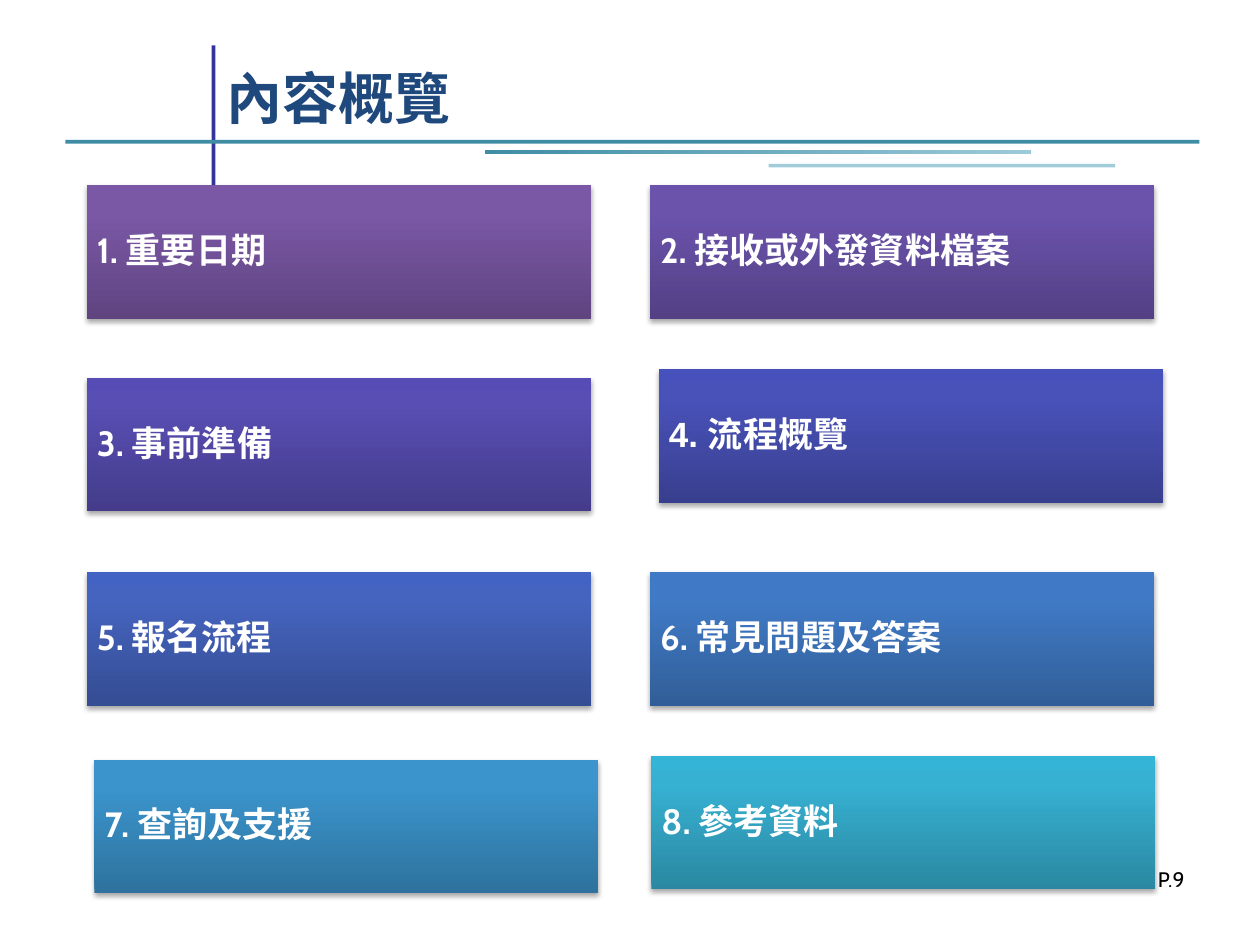
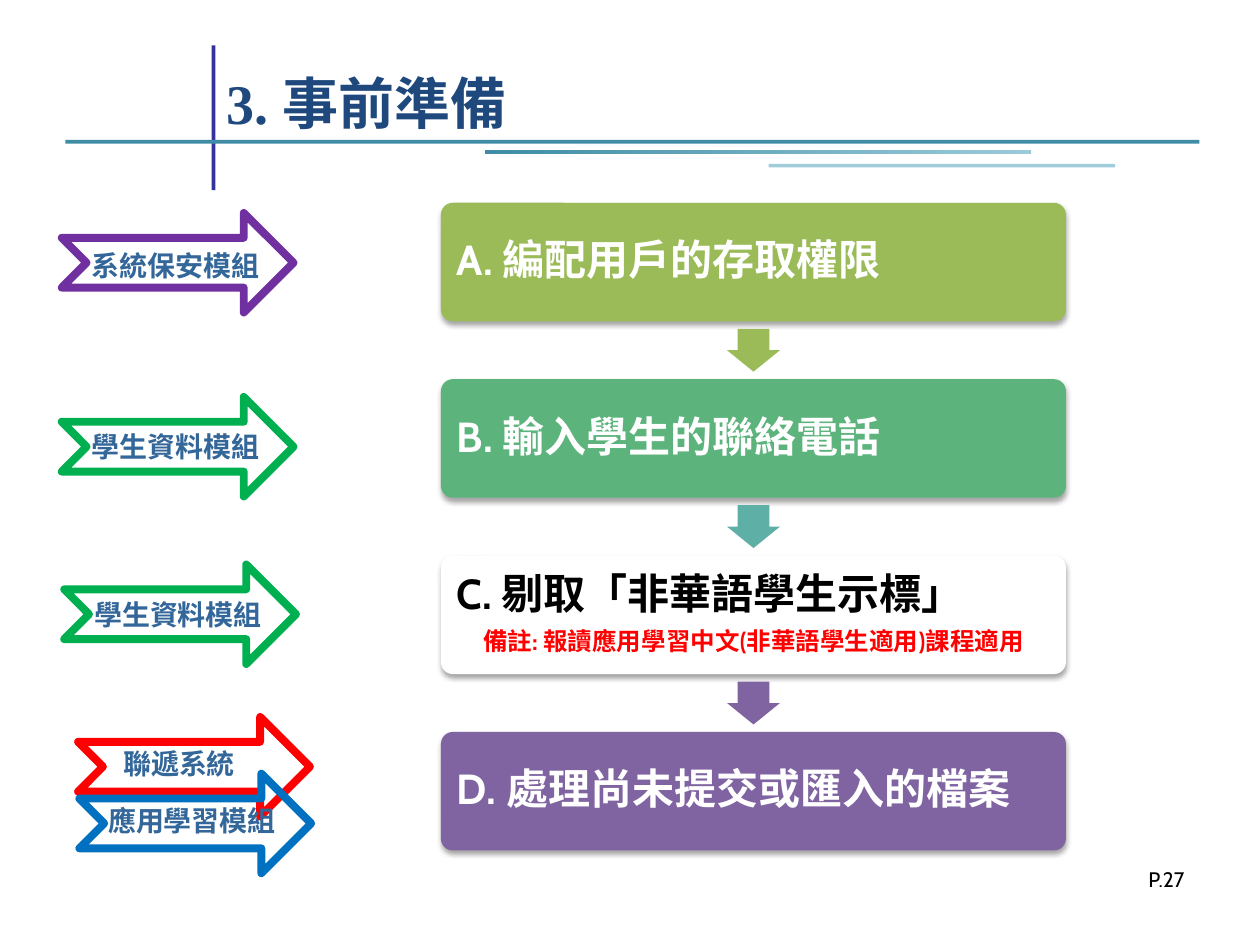
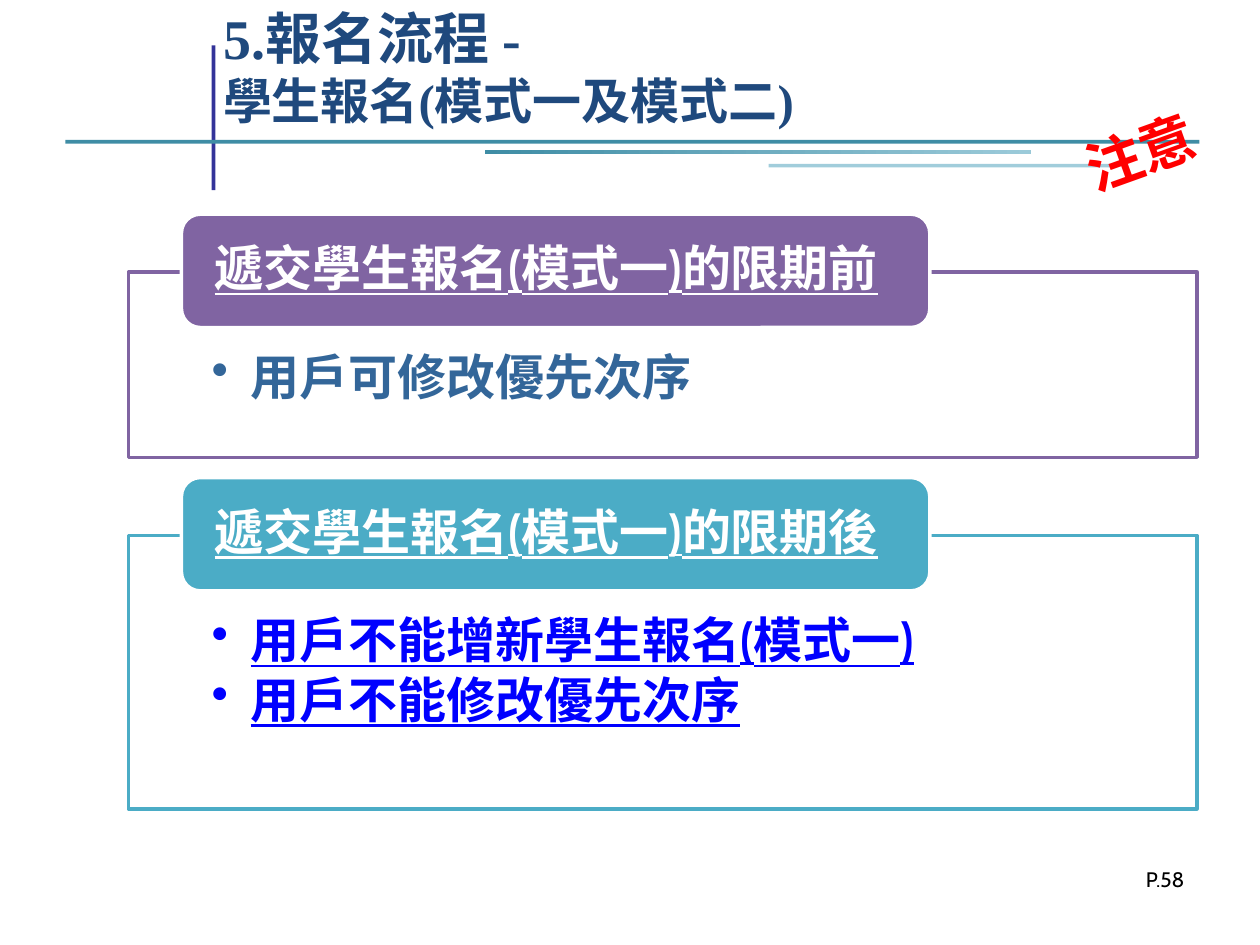
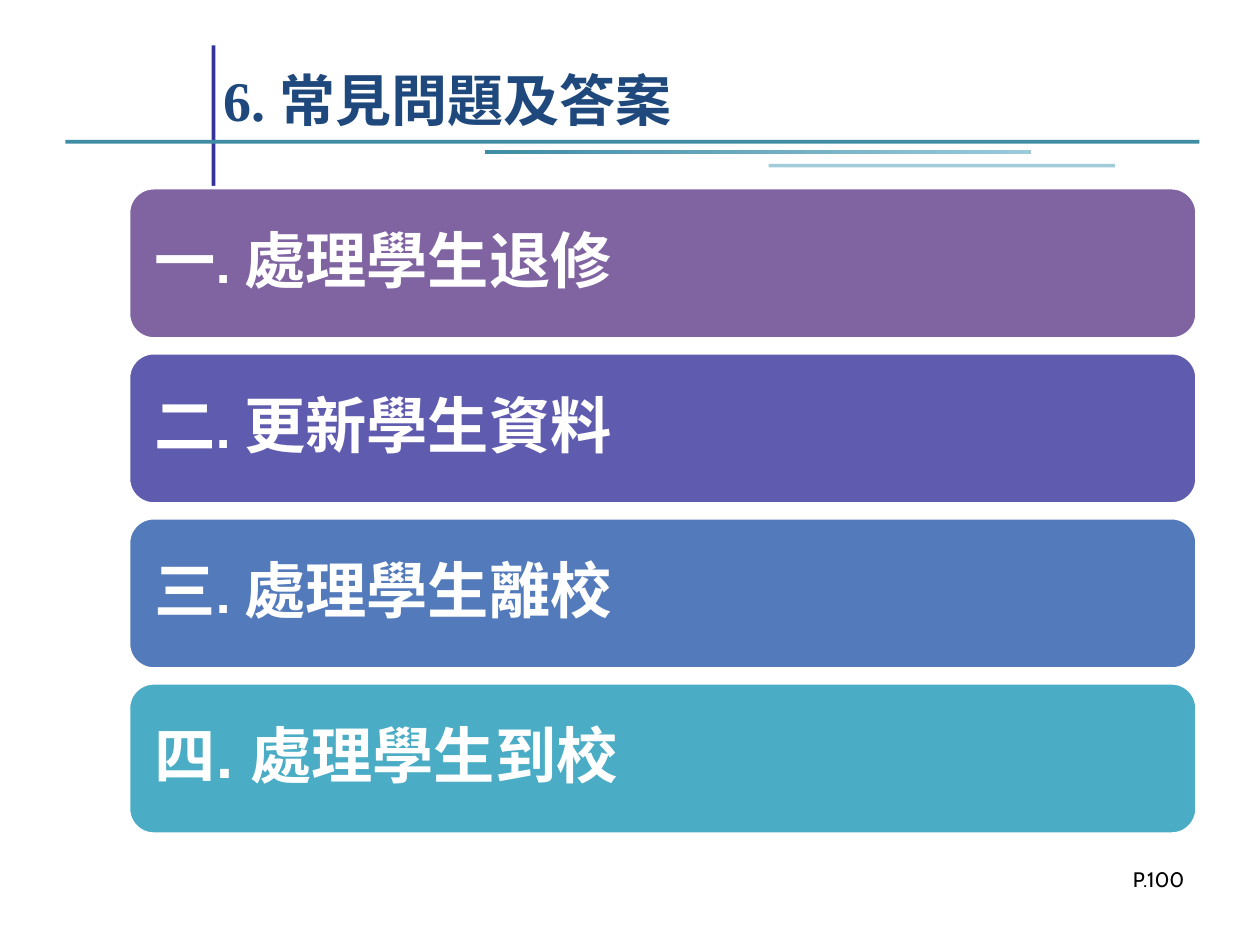
from copy import deepcopy

from lxml import etree
from pptx import Presentation
from pptx.dml.color import RGBColor
from pptx.enum.shapes import MSO_SHAPE
from pptx.enum.text import MSO_ANCHOR, MSO_AUTO_SIZE, PP_ALIGN
from pptx.oxml.ns import qn
from pptx.util import Inches, Pt

RECT = MSO_SHAPE.RECTANGLE
ROUNDED = MSO_SHAPE.ROUNDED_RECTANGLE
DOWN_ARROW = MSO_SHAPE.DOWN_ARROW
NOTCHED_ARROW = MSO_SHAPE.NOTCHED_RIGHT_ARROW
LEFT, CENTER, RIGHT = PP_ALIGN.LEFT, PP_ALIGN.CENTER, PP_ALIGN.RIGHT
TOP, MIDDLE, BOTTOM = MSO_ANCHOR.TOP, MSO_ANCHOR.MIDDLE, MSO_ANCHOR.BOTTOM
NO_AUTOFIT = MSO_AUTO_SIZE.NONE

BODY_FONT = "Cabin"
TITLE_FONT = "Times New Roman"
LATIN_FONT = "Arial"
CJK_FONT = "Noto Sans CJK SC"

WHITE = RGBColor(0xFF, 0xFF, 0xFF)
BLACK = RGBColor(0x00, 0x00, 0x00)
RED = RGBColor(0xFF, 0x00, 0x00)
BLUE = RGBColor(0x00, 0x00, 0xFF)
NAVY = RGBColor(0x1F, 0x49, 0x7D)
STEEL = RGBColor(0x33, 0x66, 0x99)
INDIGO = RGBColor(0x33, 0x33, 0x99)
TEAL = RGBColor(0x3F, 0x8D, 0xA5)
PALE_TEAL = RGBColor(0x9B, 0xCA, 0xD9)
LIGHT_TEAL = RGBColor(0xA1, 0xCD, 0xDB)
PURPLE = RGBColor(0x80, 0x64, 0xA2)
VIOLET = RGBColor(0x5F, 0x5B, 0xAE)
MID_BLUE = RGBColor(0x53, 0x7A, 0xBA)
AQUA = RGBColor(0x4B, 0xAC, 0xC6)
OLIVE = RGBColor(0x9B, 0xBB, 0x59)
GREEN = RGBColor(0x5C, 0xB3, 0x7C)
SEA = RGBColor(0x5E, 0xAF, 0xA6)
MODULE_GREEN = RGBColor(0x00, 0xB0, 0x50)
MODULE_PURPLE = RGBColor(0x70, 0x30, 0xA0)
MODULE_BLUE = RGBColor(0x00, 0x70, 0xC0)

TOPICS = [
    ("1. 重要日期", 0.69, 1.47, ("5F4480", "7B58A6", "7C57A8")),
    ("2. 接收或外發資料檔案", 5.16, 1.47, ("534085", "6B53AC", "6B52AF")),
    ("3. 事前準備", 0.69, 3, ("443C8A", "584EB3", "574CB6")),
    ("4. 流程概覽", 5.23, 2.93, ("383F8F", "4952B9", "4751BC")),
    ("5. 報名流程", 0.69, 4.54, ("354D93", "4564BF", "4263C3")),
    ("6. 常見問題及答案", 5.16, 4.54, ("315E98", "407AC6", "3E7AC9")),
    ("7. 查詢及支援", 0.75, 6.03, ("2E729D", "3B94CC", "3995CF")),
    ("8. 參考資料", 5.17, 6, ("2A88A2", "37B1D2", "34B4D6")),
]
STEPS = [
    ("A. 編配用戶的存取權限", OLIVE, WHITE),
    ("B. 輸入學生的聯絡電話", GREEN, WHITE),
    ("C. 剔取「非華語學生示標」", WHITE, BLACK),
    ("D. 處理尚未提交或匯入的檔案", PURPLE, WHITE),
]
STEP_ARROWS = [OLIVE, SEA, PURPLE]
STEP_NOTES = {2: "備註: 報讀應用學習中文(非華語學生適用)課程適用"}
MODULES = [
    ("聯遞系統", 0.62, 5.69, 0.26, 0.19, WHITE, RED),
    ("學生資料模組", 0.49, 3.15, 0.14, 0.21, WHITE, MODULE_GREEN),
    ("系統保安模組", 0.49, 1.69, 0.14, 0.23, WHITE, MODULE_PURPLE),
    ("應用學習模組", 0.63, 6.14, 0.13, 0.19, None, MODULE_BLUE),
    ("學生資料模組", 0.51, 4.48, 0.14, 0.21, WHITE, MODULE_GREEN),
]
QUESTIONS = [
    (("一. 處理學生退修",), PURPLE),
    (("二. 更新學生資料",), VIOLET),
    (("三. 處理學生離校",), MID_BLUE),
    (("四", ". 處理學生到校"), AQUA),
]


def add_box(slide, kind, box, fill=None, line=None, line_width=2):
    """Add a preset shape without shadow."""
    shape = slide.shapes.add_shape(kind, *map(Inches, box))
    shape.shadow.inherit = False
    if fill is None:
        shape.fill.background()
    else:
        shape.fill.solid()
        shape.fill.fore_color.rgb = fill
    if line is None:
        shape.line.fill.background()
    else:
        shape.line.color.rgb = line
        shape.line.width = Pt(line_width)
    return shape


def set_gradient(shape, angle, stops):
    """Fill a shape with a linear gradient of (position, colour) stops."""
    shape.fill.gradient()
    shape.fill.gradient_angle = angle
    stop_list = shape.element.spPr.find(".//" + qn("a:gsLst"))
    while len(stop_list) < len(stops):
        stop_list.append(deepcopy(stop_list[-1]))
    for stop, (position, colour) in zip(shape.fill.gradient_stops, stops):
        stop.position = position
        stop.color.rgb = colour


def add_shadow(shape):
    """Give a shape a soft shadow straight below it."""
    effects = shape.element.spPr.find(qn("a:effectLst"))
    shadow = etree.SubElement(
        effects, qn("a:outerShdw"), blurRad=str(Pt(3.1)), dist=str(Pt(1.8)),
        dir="5400000", rotWithShape="0")
    colour = etree.SubElement(shadow, qn("a:srgbClr"), val="000000")
    etree.SubElement(colour, qn("a:alpha"), val="35000")


def set_frame(shape, anchor=TOP, margins=(0.1, 0.05)):
    """Set wrapping, anchor and (side, top and bottom) margins of a text frame."""
    frame = shape.text_frame
    frame.word_wrap = True
    frame.auto_size = NO_AUTOFIT
    frame.vertical_anchor = anchor
    frame.margin_left = frame.margin_right = Inches(margins[0])
    frame.margin_top = frame.margin_bottom = Inches(margins[1])
    return frame


def style(paragraph, size, colour, bold=True, name=BODY_FONT, align=LEFT,
          spacing=None, underline=None):
    """Format a whole paragraph."""
    paragraph.alignment = align
    paragraph.line_spacing = spacing
    font = paragraph.font
    font.size, font.bold, font.name = Pt(size), bold, name
    font.underline = underline
    font.color.rgb = colour
    defaults = paragraph._p.pPr.find(qn("a:defRPr"))
    etree.SubElement(defaults, qn("a:ea"), typeface=CJK_FONT)


def add_label(slide, box, text, size, colour, **options):
    """Add a text box with one paragraph."""
    label = slide.shapes.add_textbox(*map(Inches, box))
    paragraph = set_frame(label).paragraphs[0]
    paragraph.text = text
    style(paragraph, size, colour, **options)
    return label


def add_bullet(paragraph):
    """Give a paragraph a hanging round bullet."""
    properties = paragraph._p.get_or_add_pPr()
    properties.set("marL", str(Inches(0.31)))
    properties.set("indent", str(Inches(-0.31)))
    etree.SubElement(properties, qn("a:buChar"), char="•")


def decorate_layout(slide):
    """Draw the title rules and move them to the slide's layout."""
    rules = [
        add_box(slide, RECT, (1.68, 0.36, 0.03, 1.15), INDIGO),
        add_box(slide, RECT, (0.52, 1.11, 9, 0.03), TEAL),
        add_box(slide, RECT, (3.85, 1.19, 4.33, 0.03), TEAL),
        add_box(slide, RECT, (6.1, 1.3, 2.75, 0.03), LIGHT_TEAL),
    ]
    set_gradient(rules[2], 0, [(0, TEAL), (1, PALE_TEAL)])
    for rule in rules:
        slide.slide_layout.shapes.element.append(rule.element)


def start_slide(deck, title, left, top, page, subtitle=None):
    """Add a slide with its title and page number."""
    slide = deck.slides.add_slide(deck.slide_layouts[5])
    heading = slide.shapes.title
    heading.left, heading.top = Inches(left), Inches(top)
    heading.width, heading.height = Inches(7.83), Inches(0.83)
    paragraph = set_frame(heading, BOTTOM).paragraphs[0]
    paragraph.text = title
    style(paragraph, 32, NAVY, name=TITLE_FONT)
    if subtitle:
        paragraph.add_line_break()
        run = paragraph.add_run()
        run.text = subtitle
        run.font.size = Pt(28)
    add_label(slide, (7.17, 6.83, 2.33, 0.52), f"P.{page}", 12, BLACK,
              bold=False, align=RIGHT)
    return slide


def add_topic(slide, text, left, top, colours):
    """Add one shaded tile of the overview."""
    tile = add_box(slide, RECT, (left, top, 4, 1.06), WHITE)
    stops = [RGBColor.from_string(colour) for colour in colours]
    set_gradient(tile, 90, list(zip((0, 0.8, 1), stops)))
    add_shadow(tile)
    paragraph = set_frame(tile, MIDDLE, (0.08, 0.08)).paragraphs[0]
    paragraph.text = text
    name = LATIN_FONT if text.startswith("4") else BODY_FONT
    style(paragraph, 20, WHITE, name=name, spacing=0.9)


def add_steps(slide, left, top, width):
    """Stack the preparation steps with arrows between them."""
    height, pitch = 0.94, 1.4
    for index, (text, fill, colour) in enumerate(STEPS):
        step_top = top + index * pitch
        step = add_box(slide, ROUNDED, (left, step_top, width, height), fill)
        step.adjustments[0] = 0.1
        add_shadow(step)
        frame = set_frame(step, MIDDLE, (0.1, 0.1))
        paragraph = frame.paragraphs[0]
        paragraph.text = text
        style(paragraph, 24, colour, spacing=0.9)
        if index in STEP_NOTES:
            paragraph.space_after = Pt(6)
            note = frame.add_paragraph()
            note.text = STEP_NOTES[index]
            style(note, 14, RED, align=CENTER, spacing=0.9)
    for index, fill in enumerate(STEP_ARROWS):
        arrow_top = top + index * pitch + height + 0.06
        arrow = add_box(slide, DOWN_ARROW,
                        (left + width / 2 - 0.21, arrow_top, 0.42, 0.34), fill)
        arrow.adjustments[0], arrow.adjustments[1] = 0.6, 0.5


def add_module(slide, text, left, top, indent, drop, fill, line):
    """Add a notched arrow with its module name."""
    add_box(slide, NOTCHED_ARROW, (left, top, 1.84, 0.79), fill, line, 4.5)
    add_label(slide, (left + indent, top + drop, 1.65, 0.37), text, 16, STEEL)


def add_deadline(slide, top, height, heading, rules, accent, colour, underline):
    """Add a framed list under a heading tab."""
    left = 1.02
    panel = add_box(slide, RECT, (left, top + 0.46, 8.48, height), WHITE, accent)
    frame = set_frame(panel, TOP, (0.66, 0.64))
    frame.margin_bottom = Inches(0.22)
    for index, rule in enumerate(rules):
        paragraph = frame.add_paragraph() if index else frame.paragraphs[0]
        paragraph.text = rule
        paragraph.space_after = Pt(4)
        add_bullet(paragraph)
        style(paragraph, 28, colour, spacing=0.9, underline=underline)
    tab = add_box(slide, ROUNDED, (left + 0.42, top, 5.94, 0.9), accent, WHITE)
    paragraph = set_frame(tab, MIDDLE, (0.22, 0)).paragraphs[0]
    paragraph.text = heading
    style(paragraph, 28, WHITE, spacing=0.9, underline=True)


def add_questions(slide, left, top, width):
    """Stack the question bars at equal distances."""
    for index, (parts, fill) in enumerate(QUESTIONS):
        bar = add_box(slide, ROUNDED, (left, top + index * 1.31, width, 1.2),
                      fill, WHITE)
        paragraph = set_frame(bar, MIDDLE, (0.15, 0.15)).paragraphs[0]
        for part in parts:
            paragraph.add_run().text = part
        style(paragraph, 35, WHITE, spacing=0.9)
        for run in paragraph.runs[1:]:
            run.font.name = LATIN_FONT


def build_overview(deck):
    """Build the contents slide."""
    slide = start_slide(deck, "內容概覽", 1.7, 0.26, 9)
    decorate_layout(slide)
    for topic in TOPICS:
        add_topic(slide, *topic)


def build_preparation(deck):
    """Build the preparation slide."""
    slide = start_slide(deck, "3. 事前準備", 1.7, 0.3, 27)
    add_steps(slide, 3.5, 1.61, 4.96)
    for module in MODULES:
        add_module(slide, *module)


def build_enrolment(deck):
    """Build the slide on the rules before and after the deadline."""
    slide = start_slide(deck, "5.報名流程 -", 1.67, 0.25, 58,
                        "學生報名(模式一及模式二)")
    add_deadline(slide, 1.7, 1.47, "遞交學生報名(模式一)的限期前",
                 ["用戶可修改優先次序"], PURPLE, STEEL, None)
    add_deadline(slide, 3.79, 2.17, "遞交學生報名(模式一)的限期後",
                 ["用戶不能增新學生報名(模式一)", "用戶不能修改優先次序"],
                 AQUA, BLUE, True)
    notice = add_label(slide, (8.51, 0.8, 1.59, 0.74), "注意", 32, RED,
                       name=CJK_FONT)
    notice.rotation = 340.3


def build_questions(deck):
    """Build the questions slide."""
    slide = start_slide(deck, "6. 常見問題及答案", 1.67, 0.27, 100)
    add_questions(slide, 1.02, 1.49, 8.48)


def main():
    """Build and save the deck."""
    deck = Presentation()
    deck.slide_width, deck.slide_height = Inches(10), Inches(7.5)
    build_overview(deck)
    build_preparation(deck)
    build_enrolment(deck)
    build_questions(deck)
    deck.save("out.pptx")


if __name__ == "__main__":
    main()
